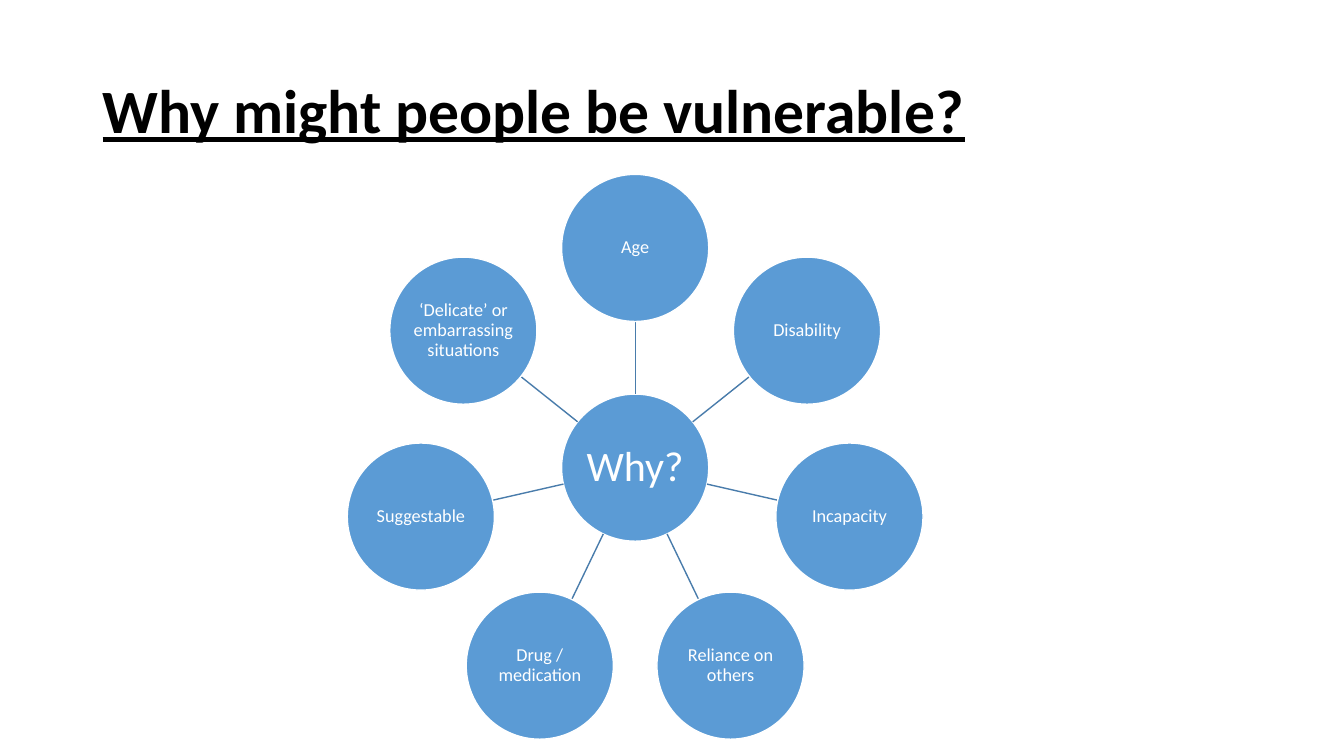
import math
from dataclasses import dataclass

import pptx
import pptx.dml.color
import pptx.enum.shapes
import pptx.enum.text
import pptx.oxml
import pptx.util

Inches = pptx.util.Inches
Alignment = pptx.enum.text.PP_ALIGN


@dataclass(frozen=True)
class Theme:
    font: str = "Calibri"
    black: str = "000000"
    white: str = "FFFFFF"
    circle: str = "5B9BD5"
    spoke: str = "497CAB"
    title_size: int = 44
    hub_size: int = 30
    reason_size: int = 13
    line_width: int = 1


class SlideBuilder:
    def __init__(self, slide, theme):
        self.slide = slide
        self.theme = theme

    def color(self, value):
        return pptx.dml.color.RGBColor.from_string(value)

    def apply(self, target, values):
        for name, value in values.items():
            setattr(target, name, value)

    def outline(self, line, color):
        line.color.rgb = self.color(color)
        line.width = pptx.util.Pt(self.theme.line_width)

    def label(self, shape, text, size, color, alignment, insets, **font_values):
        frame = shape.text_frame
        horizontal, vertical = (Inches(inset) for inset in insets)
        self.apply(frame, {
            "word_wrap": True,
            "vertical_anchor": pptx.enum.text.MSO_ANCHOR.MIDDLE,
            "margin_left": horizontal,
            "margin_right": horizontal,
            "margin_top": vertical,
            "margin_bottom": vertical,
        })
        paragraph = frame.paragraphs[0]
        self.apply(paragraph, {"alignment": alignment, "line_spacing": 0.9})
        run = paragraph.add_run()
        run.text = text
        self.apply(run.font, {
            "name": self.theme.font,
            "size": pptx.util.Pt(size),
            **font_values,
        })
        run.font.color.rgb = self.color(color)

    def title(self, text, left, top, width, height):
        shape = self.slide.shapes.add_textbox(
            Inches(left), Inches(top), Inches(width), Inches(height))
        self.label(shape, text, self.theme.title_size, self.theme.black,
                   Alignment.LEFT, (0.1, 0.05), bold=True, underline=True)

    def circle(self, text, center, diameter, size, inset):
        left, top = (Inches(value - diameter / 2) for value in center)
        shape = self.slide.shapes.add_shape(
            pptx.enum.shapes.MSO_SHAPE.OVAL,
            left, top, Inches(diameter), Inches(diameter))
        shape.shadow.inherit = False
        shape.fill.solid()
        shape.fill.fore_color.rgb = self.color(self.theme.circle)
        self.outline(shape.line, self.theme.white)
        self.label(shape, text, size, self.theme.white,
                   Alignment.CENTER, (inset, inset))

    def spoke(self, start, end):
        connector = self.slide.shapes.add_connector(
            pptx.enum.shapes.MSO_CONNECTOR.STRAIGHT,
            *(Inches(value) for value in (*start, *end)))
        self.outline(connector.line, self.theme.spoke)
        properties = connector.element.spPr
        properties.append(pptx.oxml.parse_xml(
            '<a:effectLst xmlns:a='
            '"http://schemas.openxmlformats.org/drawingml/2006/main"/>'))


def polar(center, radius, angle):
    return (center[0] + radius * math.sin(angle),
            center[1] - radius * math.cos(angle))


def main():
    presentation = pptx.Presentation()
    presentation.slide_width = Inches(13.33)
    presentation.slide_height = Inches(7.5)
    slide = presentation.slides.add_slide(presentation.slide_layouts[6])
    theme = Theme()
    builder = SlideBuilder(slide, theme)

    builder.title("Why might people be vulnerable?", 0.92, 0.4, 11.5, 1.45)

    hub = (6.3, 4.64)
    diameter = 1.46
    orbit = 2.18
    reasons = [
        "Age",
        "Disability",
        "Incapacity",
        "Reliance on others",
        "Drug / medication",
        "Suggestable",
        "‘Delicate’ or embarrassing situations",
    ]
    builder.circle("Why?", hub, diameter, theme.hub_size, 0.02)
    for index, reason in enumerate(reasons):
        angle = index * math.tau / len(reasons)
        builder.spoke(polar(hub, diameter / 2, angle),
                      polar(hub, orbit - diameter / 2, angle))
        builder.circle(reason, polar(hub, orbit, angle), diameter,
                       theme.reason_size, 0.01)

    presentation.save("out.pptx")


if __name__ == "__main__":
    main()
